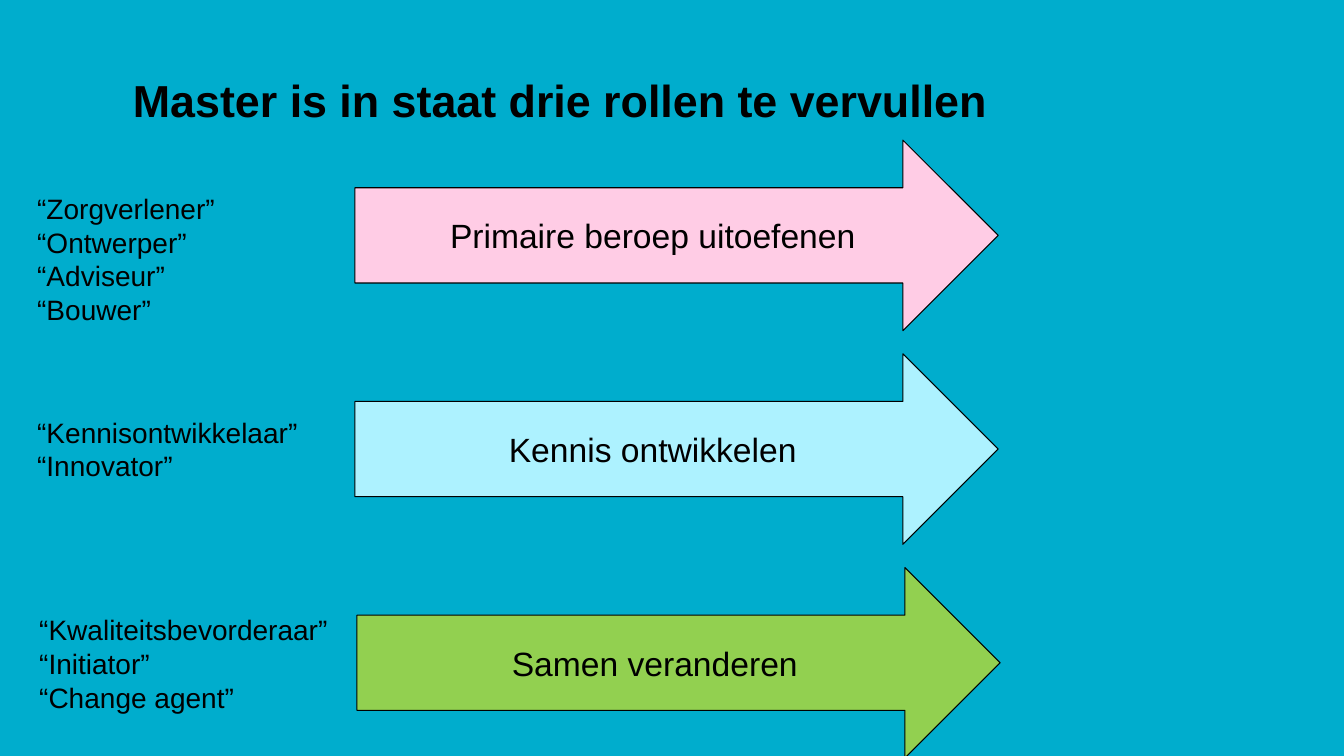
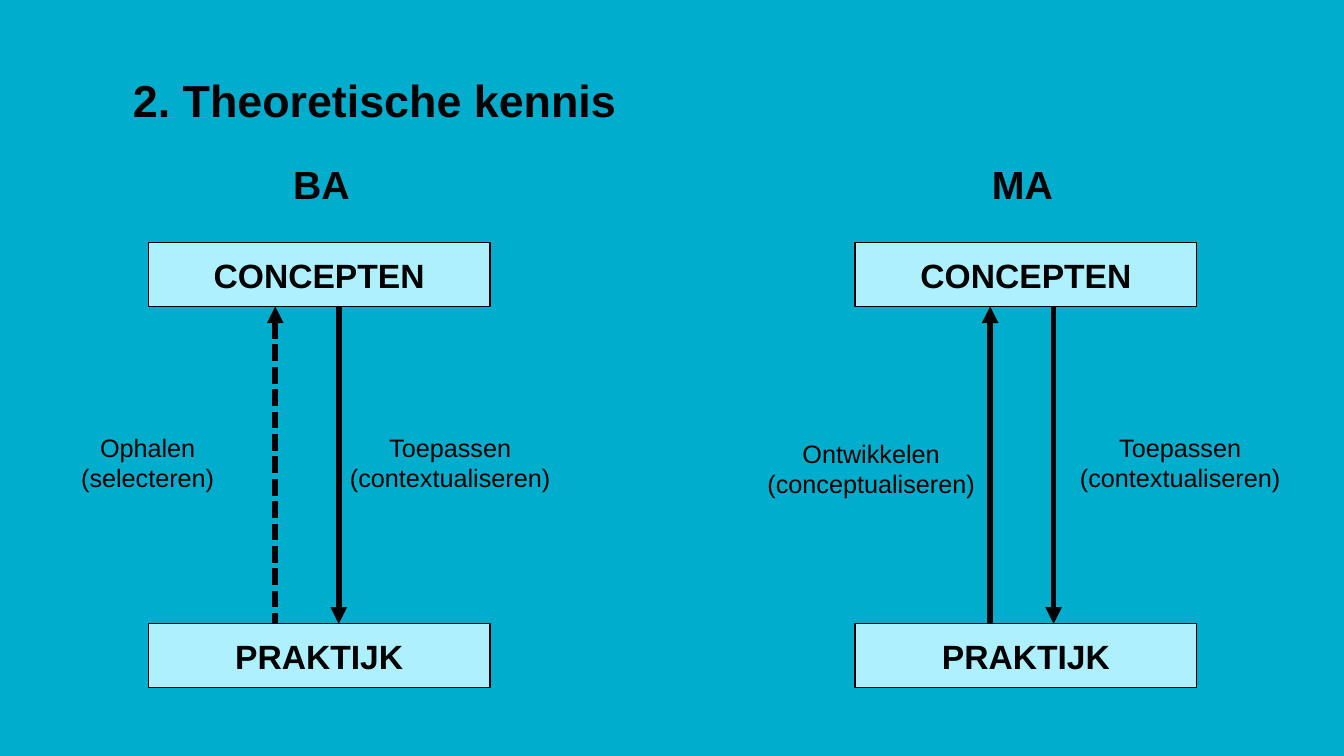
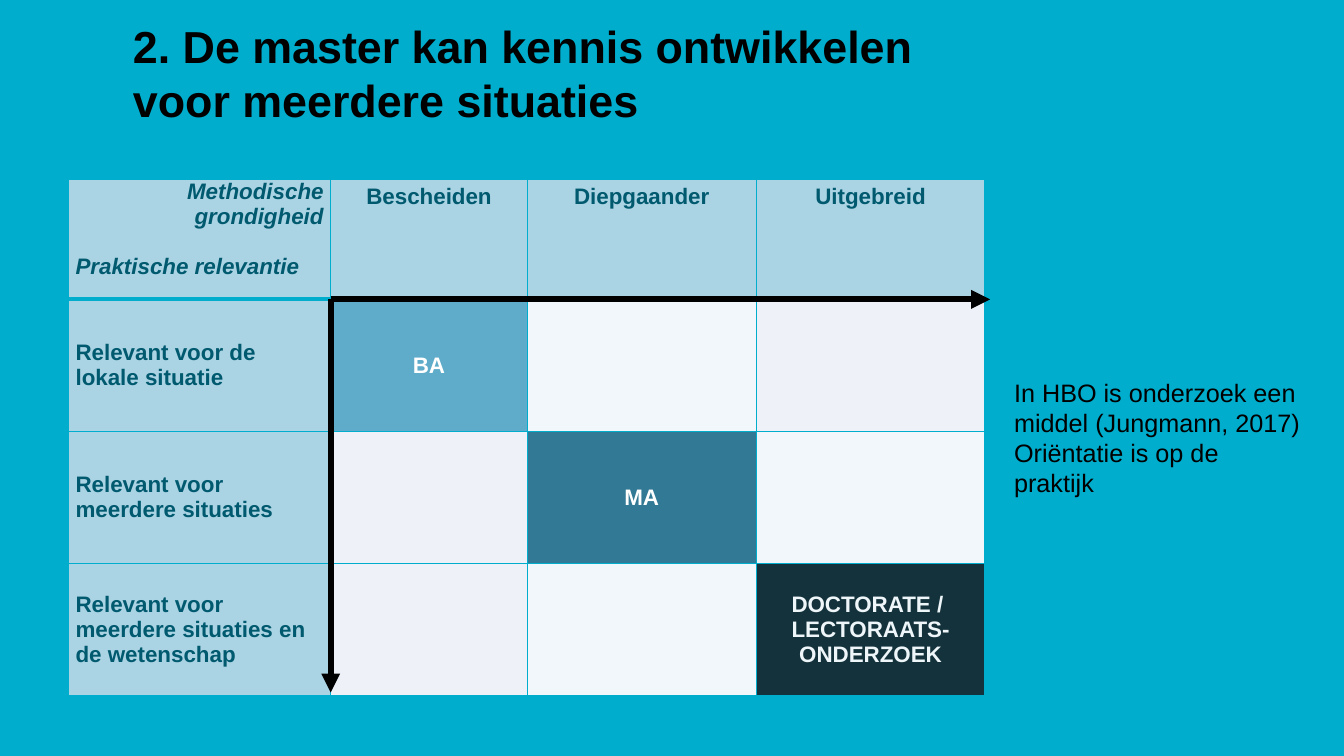
from pptx import Presentation
from pptx.dml.color import RGBColor
from pptx.enum import dml, shapes, text
from pptx.oxml.xmlchemy import OxmlElement
from pptx.util import Inches, Pt

# Colours
CYAN = RGBColor(0x00, 0xAD, 0xCD)
BLACK = RGBColor(0x00, 0x00, 0x00)
WHITE = RGBColor(0xFF, 0xFF, 0xFF)
PINK = RGBColor(0xFF, 0xCC, 0xE5)
AQUA = RGBColor(0xAD, 0xF2, 0xFF)
PALE = RGBColor(0xAF, 0xF0, 0xFF)
GREEN = RGBColor(0x92, 0xD0, 0x50)
TEAL = RGBColor(0x00, 0x5A, 0x6F)
HEAD = RGBColor(0xAA, 0xD3, 0xE3)
SKY = RGBColor(0x5F, 0xAC, 0xCA)
STEEL = RGBColor(0x31, 0x79, 0x95)
NAVY = RGBColor(0x14, 0x32, 0x3C)
MIST = RGBColor(0xF1, 0xF7, 0xFA)
LILAC = RGBColor(0xEE, 0xF1, 0xF7)
ICE = RGBColor(0xEE, 0xF6, 0xF9)

FONT = "Arial"
LEFT, MID, RIGHT = text.PP_ALIGN.LEFT, text.PP_ALIGN.CENTER, text.PP_ALIGN.RIGHT
TOP, CENTRE, BASE = (text.MSO_ANCHOR.TOP, text.MSO_ANCHOR.MIDDLE,
                     text.MSO_ANCHOR.BOTTOM)
RECT = shapes.MSO_SHAPE.RECTANGLE
ARROW = shapes.MSO_SHAPE.RIGHT_ARROW


def write(frame, words, size=18, color=BLACK, bold=False, italic=False,
          align=LEFT, anchor=TOP, wrap=True):
    """Fill a text frame, one paragraph for each line of words."""
    frame.word_wrap = wrap
    frame.vertical_anchor = anchor
    for i, line in enumerate(words.split("\n")):
        para = frame.add_paragraph() if i else frame.paragraphs[0]
        para.alignment = align
        run = para.add_run()
        run.text = line
        font = run.font
        font.name, font.size, font.color.rgb = FONT, Pt(size), color
        font.bold, font.italic = bold, italic


def edge(cell, side, width):
    """Draw one border of a table cell."""
    line = OxmlElement("a:ln" + side)
    line.set("w", str(Pt(width)))
    fill = OxmlElement("a:solidFill")
    tint = OxmlElement("a:srgbClr")
    tint.set("val", str(CYAN))
    fill.append(tint)
    line.append(fill)
    cell._tc.get_or_add_tcPr().append(line)


class Deck:
    def __init__(self):
        self.file = Presentation()
        self.file.slide_width = Inches(13.33)
        self.file.slide_height = Inches(7.5)
        self.slide = None

    def page(self, title):
        self.slide = self.file.slides.add_slide(self.file.slide_layouts[6])
        fill = self.slide.background.fill
        fill.solid()
        fill.fore_color.rgb = CYAN
        self.label(title, 1.22, 0.12, 9, 1.18, size=32, bold=True, anchor=BASE)

    def label(self, words, x, y, w, h, **style):
        box = self.slide.shapes.add_textbox(
            Inches(x), Inches(y), Inches(w), Inches(h))
        write(box.text_frame, words, **style)

    def block(self, kind, words, x, y, w, h, fill, **style):
        form = self.slide.shapes.add_shape(
            kind, Inches(x), Inches(y), Inches(w), Inches(h))
        form.shadow.inherit = False
        form.fill.solid()
        form.fill.fore_color.rgb = fill
        form.line.color.rgb = BLACK
        form.line.width = Pt(0.75)
        write(form.text_frame, words, size=24, align=MID, anchor=CENTRE,
              wrap=False, **style)

    def arrow(self, x1, y1, x2, y2, width=4, tip="tail", dash=False):
        link = self.slide.shapes.add_connector(
            shapes.MSO_CONNECTOR.STRAIGHT,
            Inches(x1), Inches(y1), Inches(x2), Inches(y2))
        link.line.color.rgb = BLACK
        link.line.width = Pt(width)
        if dash:
            link.line.dash_style = dml.MSO_LINE.SQUARE_DOT
        end = OxmlElement(f"a:{tip}End")
        end.set("type", "triangle")
        link.line._get_or_add_ln().append(end)
        link._element.spPr.append(OxmlElement("a:effectLst"))

    def table(self, x, y, cols, rows):
        grid = self.slide.shapes.add_table(
            len(rows), len(cols), Inches(x), Inches(y),
            Inches(sum(cols)), Inches(sum(rows))).table
        grid.first_row = grid.horz_banding = False
        for col, w in zip(grid.columns, cols):
            col.width = Inches(w)
        for row, h in zip(grid.rows, rows):
            row.height = Inches(h)
        return grid

    def cell(self, cell, words, fill, head=False, slim=False, **style):
        for side in "LRTB":
            edge(cell, side, 3 if head and side == "B" else 1)
        cell.fill.solid()
        cell.fill.fore_color.rgb = fill
        if slim:
            cell.margin_left = cell.margin_right = Inches(0.07)
            cell.margin_top = cell.margin_bottom = 0
        if words:
            write(cell.text_frame, words, size=16, bold=True, **style)
            cell.vertical_anchor = TOP if head else CENTRE


def roles(deck):
    deck.page("Master is in staat drie rollen te vervullen")
    rows = [
        ("Primaire beroep uitoefenen", PINK, 3.52, 1.85, 1.98,
         "“Zorgverlener”\n“Ontwerper”\n“Adviseur”\n“Bouwer”"),
        ("Kennis ontwikkelen", AQUA, 3.52, 4.07, 2.81,
         "“Kennisontwikkelaar”\n“Innovator”"),
        ("Samen veranderen", GREEN, 3.54, 6.03, 3.09,
         "“Kwaliteitsbevorderaar”\n“Initiator”\n“Change agent”"),
    ]
    for i, (task, fill, x, y, w, names) in enumerate(rows):
        deck.block(ARROW, task, x, 1.39 + 2.12 * i, 6.38, 1.89, fill)
        high = 0.1 + 0.34 * len(names.split("\n"))
        deck.label(names, x - 3.25, y, w, high, size=20, wrap=False)


def theory(deck):
    deck.page("2. Theoretische kennis")
    top, low, high = 2.41, 6.19, 0.63
    # Level, its left, box left, up arrow, dashed, then (words, x, y, w)
    sides = [
        ("BA", 2.81, 1.47, 2.73, True,
         [("Ophalen\n(selecteren)", 0.7, 4.24, 1.53),
          ("Toepassen\n(contextualiseren)", 3.36, 4.24, 2.21)]),
        ("MA", 9.74, 8.48, 9.82, False,
         [("Ontwikkelen\n(conceptualiseren)", 7.5, 4.3, 2.28),
          ("Toepassen\n(contextualiseren)", 10.6, 4.24, 2.21)]),
    ]
    for level, left, x, up, dash, notes in sides:
        deck.label(level, left, 1.54, 1, 0.57, size=28, bold=True)
        for words, y in (("CONCEPTEN", top), ("PRAKTIJK", low)):
            deck.block(RECT, words, x, y, 3.39, high, PALE, bold=True)
        deck.arrow(up, top + high, up, low, tip="head", dash=dash)
        deck.arrow(up + 0.63, top + high, up + 0.63, low)
        for words, nx, ny, w in notes:
            deck.label(words, nx, ny, w, 0.71, align=MID, wrap=False)


def matrix(deck):
    deck.page("2. De master kan kennis ontwikkelen voor meerdere situaties")
    grid = deck.table(0.68, 1.78, [2.6, 1.95, 2.27, 2.27],
                      [1.19, 1.31, 1.31, 1.31])
    # Header row
    corner = grid.cell(0, 0)
    deck.cell(corner, "Methodische grondigheid\nPraktische relevantie", HEAD,
              head=True, slim=True, color=TEAL, italic=True)
    first, second = corner.text_frame.paragraphs
    first.alignment = RIGHT
    second.space_before = Pt(18)
    for c, words in enumerate(("Bescheiden", "Diepgaander", "Uitgebreid"), 1):
        deck.cell(grid.cell(0, c), words, HEAD, head=True, color=TEAL, align=MID)
    # Body rows
    body = [
        ("Relevant voor de lokale situatie",
         ("BA", SKY, WHITE), ("", MIST, BLACK), ("", LILAC, BLACK)),
        ("Relevant voor meerdere situaties",
         ("", LILAC, BLACK), ("MA", STEEL, WHITE), ("", MIST, BLACK)),
        ("Relevant voor meerdere situaties en de wetenschap",
         ("", LILAC, BLACK), ("", MIST, BLACK),
         ("DOCTORATE / \nLECTORAATS-ONDERZOEK", NAVY, ICE)),
    ]
    for r, (scope, *cells) in enumerate(body, 1):
        deck.cell(grid.cell(r, 0), scope, HEAD, slim=True, color=TEAL)
        for c, (words, fill, color) in enumerate(cells, 1):
            deck.cell(grid.cell(r, c), words, fill, color=color, align=MID)
    # Axes
    for x, y in ((9.82, 2.97), (3.28, 6.87)):
        deck.arrow(3.28, 2.97, x, y, width=4.5)
    deck.label("In HBO is onderzoek een middel (Jungmann, 2017)\n"
               "Oriëntatie is op de praktijk", 9.96, 3.69, 3.07, 1.31)


def main():
    deck = Deck()
    roles(deck)
    theory(deck)
    matrix(deck)
    deck.file.save("out.pptx")


if __name__ == "__main__":
    main()
